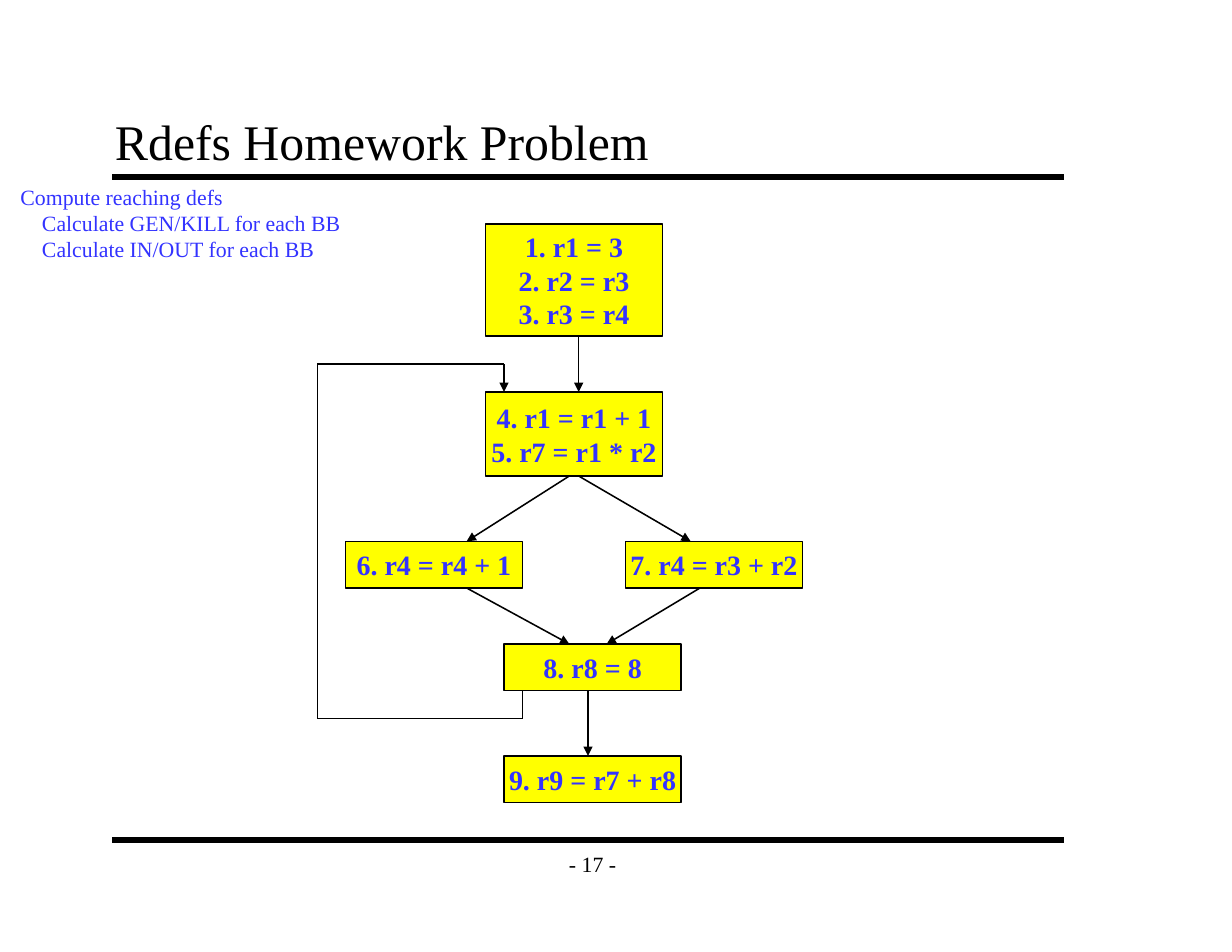
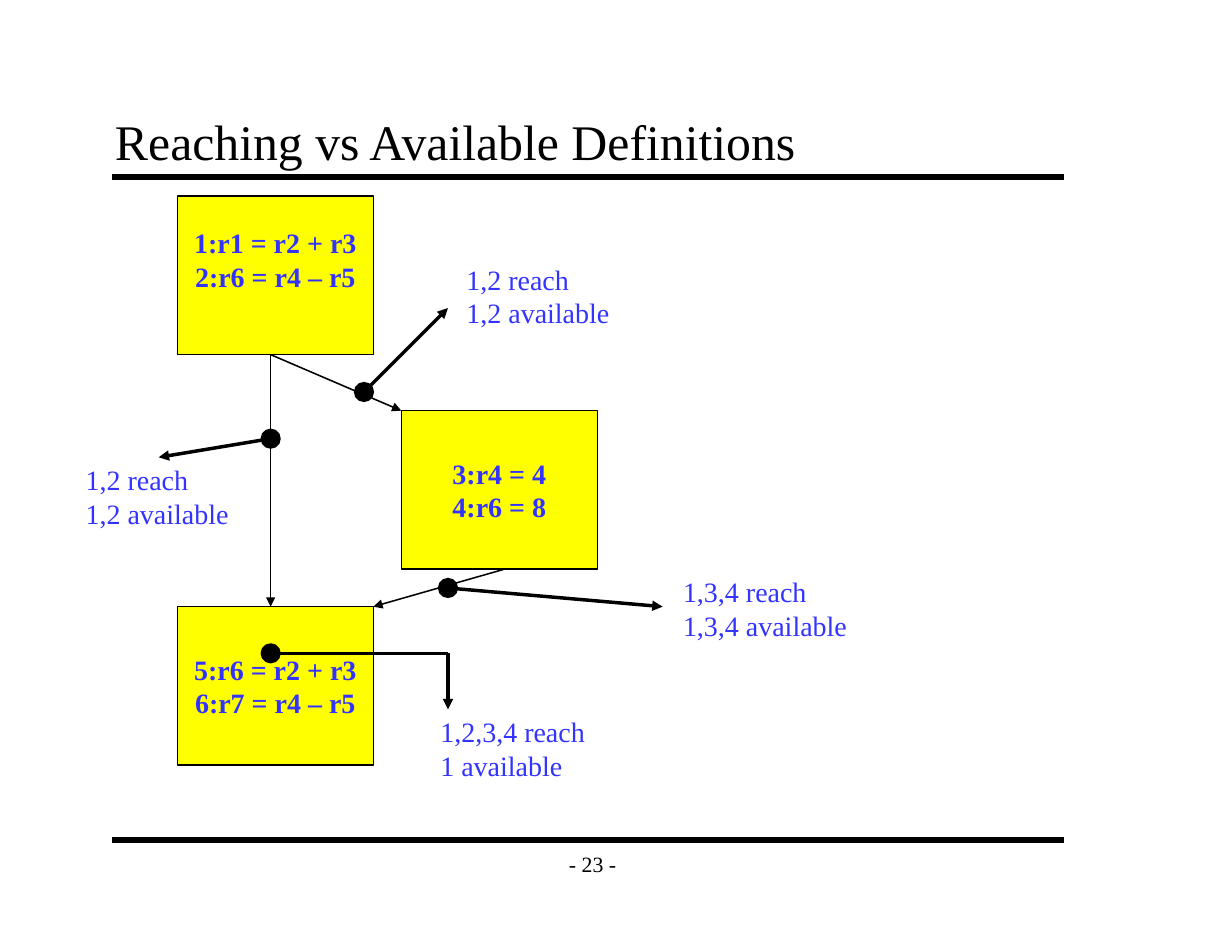
from pptx import Presentation
from pptx.dml.color import RGBColor
from pptx.enum.shapes import MSO_CONNECTOR, MSO_SHAPE
from pptx.enum.text import MSO_ANCHOR, MSO_AUTO_SIZE, PP_ALIGN
from pptx.oxml.ns import qn
from pptx.util import Cm, Pt
from lxml import etree

STRAIGHT = MSO_CONNECTOR.STRAIGHT
RECTANGLE, OVAL = MSO_SHAPE.RECTANGLE, MSO_SHAPE.OVAL
LEFT, CENTER = PP_ALIGN.LEFT, PP_ALIGN.CENTER
TOP, MIDDLE, BOTTOM = MSO_ANCHOR.TOP, MSO_ANCHOR.MIDDLE, MSO_ANCHOR.BOTTOM
NO_FIT, GROW = MSO_AUTO_SIZE.NONE, MSO_AUTO_SIZE.SHAPE_TO_FIT_TEXT

# Shared style; every position is counted in steps of a twelfth of an inch
STEP = 2.54 / 12
BLACK, YELLOW, BLUE = "000000", "FFFF00", "3333FF"
THIN, THICK, RULE = 1, 2.25, 4
FONT = "Times New Roman"
TITLE_FONT = {"size": Pt(32), "bold": False}
NUMBER_FONT = {"size": Pt(14)}
BLOCK_FONT = {"size": Pt(18), "bold": True}
WIDE_INSETS = {"margin_left": Cm(0.28), "margin_right": Cm(0.28),
               "margin_top": Cm(0.15), "margin_bottom": Cm(0.15)}
TITLE_BOX = (11, 11, 102, 8)
NUMBER_BOX = (59, 90, 9, 5)
RULES = [((12, 19), (114, 19)), ((12, 90), (114, 90))]
INDENT = Cm(0.49)
DOT = 2

# Blocks: box, lines, extra frame format. Routes: points, width, arrow at end.
# Notes: box, text size, (indent level, line) pairs. Dots: centres.
SLIDES = [
    {
        "title": "Rdefs Homework Problem",
        "number": "- 17 -",
        "blocks": [
            ((52, 24, 19, 12), ["1. r1 = 3", "2. r2 = r3", "3. r3 = r4"], {}),
            ((52, 42, 19, 9), ["4. r1 = r1 + 1", "5. r7 = r1 * r2"], {}),
            ((37, 58, 19, 5), ["6. r4 = r4 + 1"], {}),
            ((67, 58, 19, 5), ["7. r4 = r3 + r2"], {}),
            ((54, 69, 19, 5), ["8. r8 = 8"], {}),
            ((54, 81, 19, 5), ["9. r9 = r7 + r8"], {}),
        ],
        "routes": [
            ([(62, 36), (62, 42)], THIN),
            ([(61, 51), (50, 58)], THIN),
            ([(62, 51), (74, 58)], THIN),
            ([(50, 63), (61, 69)], THIN),
            ([(75, 63), (65, 69)], THIN),
            ([(63, 74), (63, 81)], THIN),
            ([(56, 74), (56, 77), (34, 77), (34, 39), (54, 39), (54, 42)], THIN),
        ],
        "notes": [
            ((1, 19.1, 37.1, 9.7), 14, [(0, "Compute reaching defs"),
                                        (1, "Calculate GEN/KILL for each BB"),
                                        (1, "Calculate IN/OUT for each BB")]),
        ],
        "dots": [],
    },
    {
        "title": "Reaching vs Available Definitions",
        "number": "- 23 -",
        "blocks": [
            ((19, 21, 21, 17), ["1:r1 = r2 + r3", "2:r6 = r4 – r5"],
             {"margin_bottom": Cm(0.86)}),
            ((43, 44, 21, 17), ["3:r4 = 4", "4:r6 = 8"], {}),
            ((19, 65, 21, 17), ["5:r6 = r2 + r3", "6:r7 = r4 – r5"], {}),
        ],
        "routes": [
            ([(29, 38), (43, 44)], THIN),
            ([(29, 38), (29, 65)], THIN),
            ([(54, 61), (40, 65)], THIN),
            ([(39, 42), (48, 33)], THICK),
            ([(30, 70), (48, 70), (48, 76)], THICK),
            ([(48, 63), (71, 65)], THICK),
            ([(29, 47), (17, 49)], THICK),
        ],
        "notes": [
            ((46, 76, 17.9, 8.4), 18, [(0, "1,2,3,4 reach"), (0, "1 available")]),
            ((48.8, 27.5, 17.8, 8.4), 18, [(0, "1,2 reach"), (0, "1,2 available")]),
            ((72, 61, 20, 8.4), 18, [(0, "1,3,4 reach"), (0, "1,3,4 available")]),
            ((8, 49, 17.8, 8.4), 18, [(0, "1,2 reach"), (0, "1,2 available")]),
        ],
        "dots": [(29, 70), (29, 47), (39, 42), (48, 63)],
    },
]


def rgb(color):
    return RGBColor.from_string(color)


def steps(values):
    return [Cm(value * STEP) for value in values]


def apply(target, formats):
    for name, value in formats.items():
        setattr(target, name, value)


def write(frame, lines, frame_format, font, color, align=LEFT):
    """Fill a text frame with (indent level, line) pairs."""
    apply(frame, frame_format)
    for index, (level, line) in enumerate(lines):
        paragraph = frame.add_paragraph() if index else frame.paragraphs[0]
        paragraph.alignment = align
        if level:
            paragraph._p.get_or_add_pPr().set("marL", str(level * INDENT))
        run = paragraph.add_run()
        run.text = line
        apply(run.font, {"name": FONT, **font})
        run.font.color.rgb = rgb(color)


def add_filled(slide, preset, box, fill):
    shape = slide.shapes.add_shape(preset, *steps(box))
    shape.shadow.inherit = False
    shape.fill.solid()
    shape.fill.fore_color.rgb = rgb(fill)
    shape.line.color.rgb = rgb(BLACK)
    shape.line.width = Pt(THIN)
    return shape


def add_line(slide, start, end, width, arrow=False):
    line = slide.shapes.add_connector(STRAIGHT, *steps(start + end))
    line.line.color.rgb = rgb(BLACK)
    line.line.width = Pt(width)
    if arrow:
        etree.SubElement(line.line._get_or_add_ln(), qn("a:tailEnd"), type="triangle")
    etree.SubElement(line._element.spPr, qn("a:effectLst"))


def add_base(prs, title, number):
    """Start a slide with its rules, page number and title."""
    slide = prs.slides.add_slide(prs.slide_layouts[5])
    for start, end in RULES:
        add_line(slide, start, end, RULE)
    page = slide.shapes.add_textbox(*steps(NUMBER_BOX))
    write(page.text_frame, [(0, number)],
          {"word_wrap": False, "vertical_anchor": MIDDLE, **WIDE_INSETS},
          NUMBER_FONT, BLACK, CENTER)
    heading = slide.shapes.title
    apply(heading, dict(zip(("left", "top", "width", "height"), steps(TITLE_BOX))))
    write(heading.text_frame, [(0, title)],
          {"word_wrap": True, "auto_size": NO_FIT, "vertical_anchor": BOTTOM, **WIDE_INSETS},
          TITLE_FONT, BLACK)
    return slide


def build_slide(prs, content):
    slide = add_base(prs, content["title"], content["number"])
    # Basic blocks
    for box, lines, extra in content["blocks"]:
        block = add_filled(slide, RECTANGLE, box, YELLOW)
        write(block.text_frame, [(0, line) for line in lines],
              {"word_wrap": False, "vertical_anchor": MIDDLE, **extra},
              BLOCK_FONT, BLUE, CENTER)
    # Control flow and pointers, with the arrowhead on the last leg
    for points, width in content["routes"]:
        for start, end in zip(points, points[1:]):
            add_line(slide, start, end, width, arrow=end == points[-1])
    # Notes
    for box, size, lines in content["notes"]:
        note = slide.shapes.add_textbox(*steps(box))
        write(note.text_frame, lines,
              {"word_wrap": False, "auto_size": GROW, "vertical_anchor": TOP},
              {"size": Pt(size)}, BLUE)
    # Program points
    for x, y in content["dots"]:
        add_filled(slide, OVAL, (x - DOT / 2, y - DOT / 2, DOT, DOT), BLACK)


def main():
    prs = Presentation()
    prs.slide_width, prs.slide_height = Cm(27.94), Cm(21.59)
    for content in SLIDES:
        build_slide(prs, content)
    prs.save("out.pptx")


if __name__ == "__main__":
    main()
